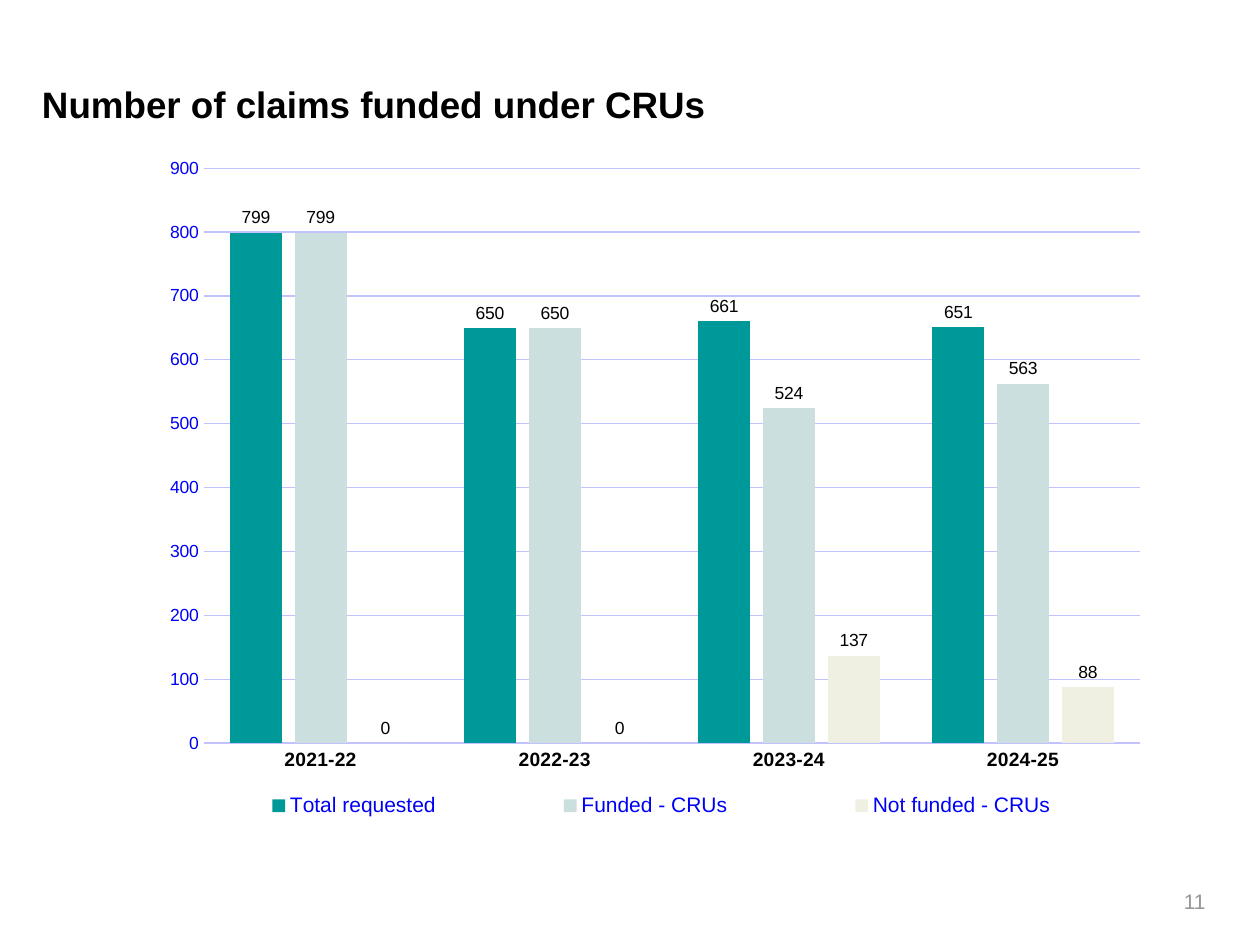
from lxml.etree import SubElement
from pptx import Presentation
from pptx.chart.data import CategoryChartData
from pptx.dml.color import RGBColor
from pptx.enum.chart import (XL_CHART_TYPE as ChartType, XL_LABEL_POSITION as LabelPosition,
                             XL_LEGEND_POSITION as LegendPosition, XL_TICK_MARK as TickMark)
from pptx.enum.text import MSO_ANCHOR, PP_ALIGN
from pptx.oxml.ns import qn
from pptx.util import Pt

# Content
TITLE = "Number of claims funded under CRUs"
PAGE_NUMBER = "11"
YEARS = ["2021-22", "2022-23", "2023-24", "2024-25"]
SERIES = [
    ("Total requested", [799, 650, 661, 651], "requested"),
    ("Funded - CRUs", [799, 650, 524, 563], "funded"),
    ("Not funded - CRUs", [0, 0, 137, 88], "not_funded"),
]
COLORS = {
    "requested": "009999", "funded": "CCDFDF", "not_funded": "F0F0E2",
    "text": "000000", "base": "000066", "axis": "0000F5", "grid": "C2C2FF", "page": "969696",
}
FONT = "Arial"
PLOT_LAYOUT = (0.06, 0.03, 0.9, 0.83)
LEGEND_LAYOUT = (0.01, 0.92, 0.98, 0.06)


def color(name):
    return RGBColor.from_string(COLORS[name])


def style_font(font, size, color_name, bold=False):
    font.name, font.size, font.bold = FONT, Pt(size), bold
    font.color.rgb = color(color_name)


def add_text(slide, text, box, size, color_name, bold=False, align=PP_ALIGN.LEFT,
             insets=(0, 0), line_spacing=None):
    shape = slide.shapes.add_textbox(*map(Pt, box))
    frame = shape.text_frame
    frame.word_wrap = True
    frame.vertical_anchor = MSO_ANCHOR.TOP
    frame.margin_left = frame.margin_right = Pt(insets[0])
    frame.margin_top = frame.margin_bottom = Pt(insets[1])
    paragraph = frame.paragraphs[0]
    paragraph.alignment = align
    if line_spacing:
        paragraph.line_spacing = Pt(line_spacing)
    run = paragraph.add_run()
    run.text = text
    style_font(run.font, size, color_name, bold)


def set_layout(element, fractions, before, inner=False):
    """Place a chart part by fractions of the chart's size."""
    for old in element.findall(qn("c:layout")):
        element.remove(old)
    layout = SubElement(element, qn("c:layout"))
    element.find(qn(before)).addprevious(layout)
    manual = SubElement(layout, qn("c:manualLayout"))
    settings = [("layoutTarget", "inner")] if inner else []
    settings += [("xMode", "edge"), ("yMode", "edge"), *zip("xywh", fractions)]
    for tag, value in settings:
        SubElement(manual, qn("c:" + tag)).set("val", str(value))


def add_claims_chart(slide, box):
    data = CategoryChartData()
    data.categories = YEARS
    for name, values, _ in SERIES:
        data.add_series(name, values)
    chart = slide.shapes.add_chart(ChartType.COLUMN_CLUSTERED, *map(Pt, box), data).chart
    chart.has_title = False
    style_font(chart.font, 10, "base")

    # Columns and their labels
    plot = chart.plots[0]
    plot.gap_width, plot.overlap, plot.vary_by_categories = 100, -24, False
    for series, (_, _, color_name) in zip(plot.series, SERIES):
        series.format.fill.solid()
        series.format.fill.fore_color.rgb = color(color_name)
        labels = series.data_labels
        labels.show_value = True
        labels.position = LabelPosition.OUTSIDE_END
        style_font(labels.font, 10, "text")

    # Axes
    category_axis, value_axis = chart.category_axis, chart.value_axis
    for axis in (category_axis, value_axis):
        axis.major_tick_mark = axis.minor_tick_mark = TickMark.NONE
    style_font(category_axis.tick_labels.font, 11, "text", bold=True)
    style_font(value_axis.tick_labels.font, 10, "axis")
    value_axis.minimum_scale, value_axis.maximum_scale, value_axis.major_unit = 0, 900, 100
    value_axis.format.line.fill.background()
    for line, width in ((category_axis.format.line, 1),
                        (value_axis.major_gridlines.format.line, 0.75)):
        line.color.rgb = color("grid")
        line.width = Pt(width)

    # Legend and plot placement
    chart.has_legend = True
    legend = chart.legend
    legend.position = LegendPosition.BOTTOM
    legend.include_in_layout = False
    style_font(legend.font, 12, "axis")
    chart_element = chart.element.find(qn("c:chart"))
    set_layout(chart_element.find(qn("c:plotArea")), PLOT_LAYOUT, "c:barChart", inner=True)
    set_layout(chart_element.find(qn("c:legend")), LEGEND_LAYOUT, "c:overlay")


def main():
    presentation = Presentation()
    presentation.slide_width, presentation.slide_height = Pt(720), Pt(540)
    slide = presentation.slides.add_slide(presentation.slide_layouts[6])
    add_text(slide, PAGE_NUMBER, (636, 504, 60, 24), 12, "page",
             align=PP_ALIGN.RIGHT, insets=(7.2, 3.6))
    add_text(slide, TITLE, (24, 48, 678, 24), 21, "text", bold=True, line_spacing=24)
    add_claims_chart(slide, (80.64, 84.24, 594.72, 396))
    presentation.save("out.pptx")


if __name__ == "__main__":
    main()
